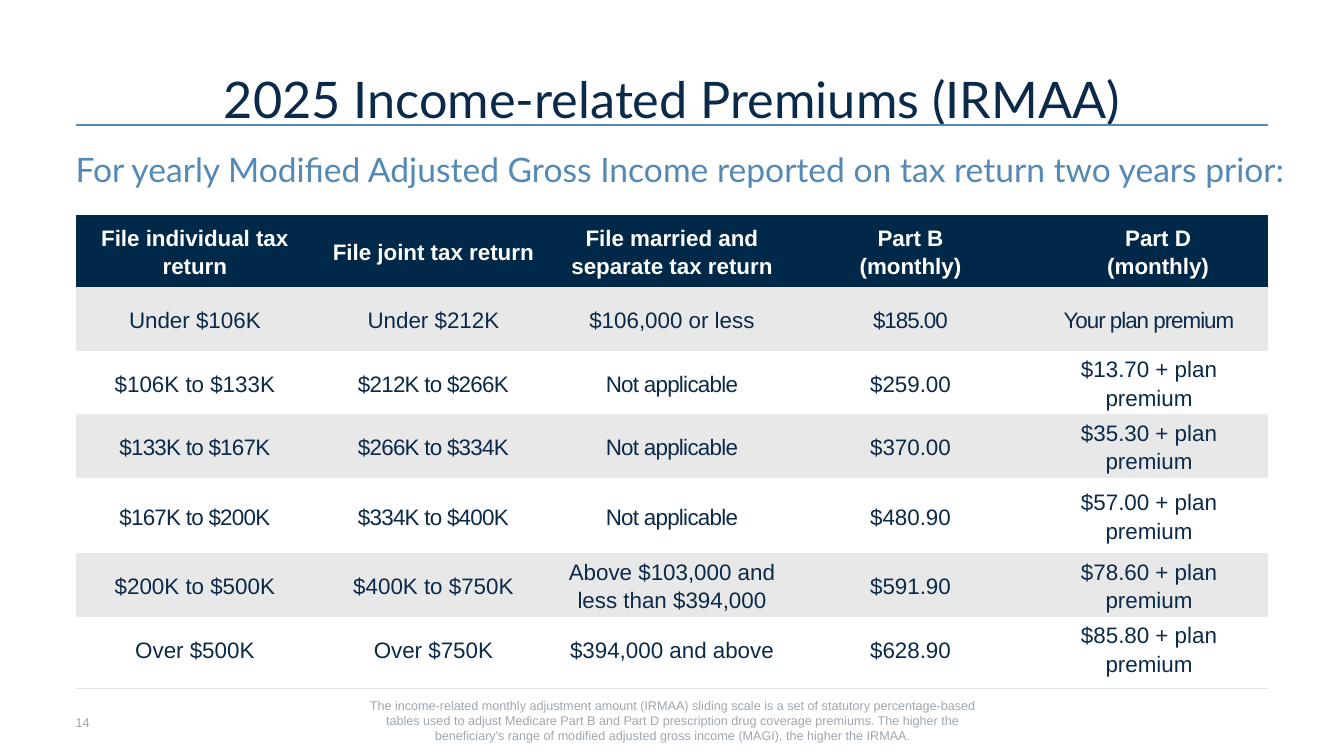
from lxml import etree
from pptx import Presentation
from pptx.dml.color import RGBColor
from pptx.enum.shapes import MSO_CONNECTOR
from pptx.enum.text import MSO_ANCHOR, MSO_AUTO_SIZE, PP_ALIGN
from pptx.oxml.ns import qn
from pptx.util import Inches, Pt

NAVY = RGBColor(0x0B, 0x29, 0x49)
HEADER_NAVY = RGBColor(0x00, 0x29, 0x49)
BLUE = RGBColor(0x54, 0x89, 0xB6)
GREY = RGBColor(0x9E, 0xA7, 0xB0)
PALE_LINE = RGBColor(0xE1, 0xE5, 0xE8)
BAND = RGBColor(0xE8, 0xE8, 0xE8)
WHITE = RGBColor(0xFF, 0xFF, 0xFF)

TITLE = "2025 Income-related Premiums (IRMAA)"
SUBTITLE = "For yearly Modified Adjusted Gross Income reported on tax return two years prior:"
FOOTNOTE = (
    "The income-related monthly adjustment amount (IRMAA) sliding scale is a set of statutory "
    "percentage-based tables used to adjust Medicare Part B and Part D prescription drug coverage "
    "premiums. The higher the beneficiary's range of modified adjusted gross income (MAGI), "
    "the higher the IRMAA."
)
PAGE_NUMBER = "14"
PREMIUMS = [
    ("File individual tax return", "File joint tax return",
     "File married and separate tax return", "Part B\n(monthly)", "Part D\n(monthly)"),
    ("Under $106K", "Under $212K", "$106,000 or less", "$185.00", "Your plan premium"),
    ("$106K to $133K", "$212K to $266K", "Not applicable", "$259.00", "$13.70 + plan premium"),
    ("$133K to $167K", "$266K to $334K", "Not applicable", "$370.00", "$35.30 + plan premium"),
    ("$167K to $200K", "$334K to $400K", "Not applicable", "$480.90", "$57.00 + plan premium"),
    ("$200K to $500K", "$400K to $750K", "Above $103,000 and less than $394,000",
     "$591.90", "$78.60 + plan premium"),
    ("Over $500K", "Over $750K", "$394,000 and above", "$628.90", "$85.80 + plan premium"),
]
ROW_HEIGHTS = [0.72, 0.63, 0.63, 0.63, 0.75, 0.63, 0.63]
# Character spacing in hundredths of a point, as row: {column: spacing}
TIGHT = {
    1: {3: -70, 4: -70},
    2: {1: -50, 2: -50},
    3: {0: -50, 1: -50, 2: -50},
    4: {0: -50, 1: -50, 2: -50},
}
LEFT, WIDTH = 0.75, 11.83
NO_GRID_STYLE = "{2D5ABB26-0587-4C30-8999-92F81FD0307C}"


def style(para, size, color, font="Arial", bold=False, align=PP_ALIGN.LEFT, spacing=1.0):
    para.alignment = align
    para.line_spacing = spacing
    para.font.name = font
    para.font.size = Pt(size)
    para.font.bold = bold
    para.font.color.rgb = color


def set_frame(frame, anchor, margins=(0, 0, 0, 0)):
    """Margins run left, top, right, bottom."""
    frame.word_wrap = True
    frame.auto_size = MSO_AUTO_SIZE.NONE
    frame.vertical_anchor = anchor
    (frame.margin_left, frame.margin_top,
     frame.margin_right, frame.margin_bottom) = map(Inches, margins)


def add_text(page, text, place, anchor, margins=(0, 0, 0, 0), **look):
    box = page.shapes.add_textbox(*map(Inches, place))
    set_frame(box.text_frame, anchor, margins)
    box.text_frame.text = text
    style(box.text_frame.paragraphs[0], **look)


def add_rule(page, y, color, weight):
    rule = page.shapes.add_connector(MSO_CONNECTOR.STRAIGHT, Inches(LEFT), Inches(y),
                                     Inches(LEFT + WIDTH), Inches(y))
    rule.line.color.rgb = color
    rule.line.width = Pt(weight)
    etree.SubElement(rule._element.spPr, qn("a:effectLst"))


def add_premium_table(page):
    columns = len(PREMIUMS[0])
    frame = page.shapes.add_table(len(PREMIUMS), columns, Inches(LEFT), Inches(2.13),
                                  Inches(WIDTH), Inches(sum(ROW_HEIGHTS)))
    table = frame.table
    frame._element.find(".//" + qn("a:tableStyleId")).text = NO_GRID_STYLE
    for column in table.columns:
        column.width = Inches(WIDTH / columns)
    for r, (height, texts) in enumerate(zip(ROW_HEIGHTS, PREMIUMS)):
        table.rows[r].height = Inches(height)
        header = r == 0
        fill = HEADER_NAVY if header else BAND if r % 2 else WHITE
        for c, text in enumerate(texts):
            cell = table.cell(r, c)
            cell.fill.solid()
            cell.fill.fore_color.rgb = fill
            cell.vertical_anchor = MSO_ANCHOR.MIDDLE
            # The last heading sits slightly right of centre
            cell.margin_left = Inches(0.25 if header and c == columns - 1 else 0.07)
            cell.margin_right = Inches(0.07)
            cell.margin_top = cell.margin_bottom = 0
            cell.text_frame.text = text
            tracking = TIGHT.get(r, {}).get(c)
            for para in cell.text_frame.paragraphs:
                style(para, 16, WHITE if header else NAVY, bold=header,
                      align=PP_ALIGN.CENTER, spacing=1.15)
                if tracking:
                    para.runs[0]._r.get_or_add_rPr().set("spc", str(tracking))


def main():
    deck = Presentation()
    deck.slide_width, deck.slide_height = Inches(13.33), Inches(7.5)
    page = deck.slides.add_slide(deck.slide_layouts[5])

    add_rule(page, 6.83, PALE_LINE, 0.5)

    title = page.shapes.title
    title.left, title.top, title.width, title.height = map(Inches, (LEFT, 0.74, WIDTH, 1))
    set_frame(title.text_frame, MSO_ANCHOR.TOP)
    title.text_frame.text = TITLE
    style(title.text_frame.paragraphs[0], 36, NAVY, "Lato",
          align=PP_ALIGN.CENTER, spacing=0.9)

    add_text(page, FOOTNOTE, (3.59, 6.93, 6.16, 0.44), MSO_ANCHOR.BOTTOM,
             size=9, color=GREY, align=PP_ALIGN.CENTER)
    add_text(page, PAGE_NUMBER, (LEFT, 7.09, 0.3, 0.15), MSO_ANCHOR.BOTTOM,
             size=9, color=GREY)
    add_premium_table(page)
    add_text(page, SUBTITLE, (LEFT, 1.43, 12.42, 0.5), MSO_ANCHOR.TOP,
             (0, 0.05, 0.1, 0.05), size=24, color=BLUE, font="Lato")
    add_rule(page, 1.24, BLUE, 1)

    deck.save("out.pptx")


if __name__ == "__main__":
    main()
